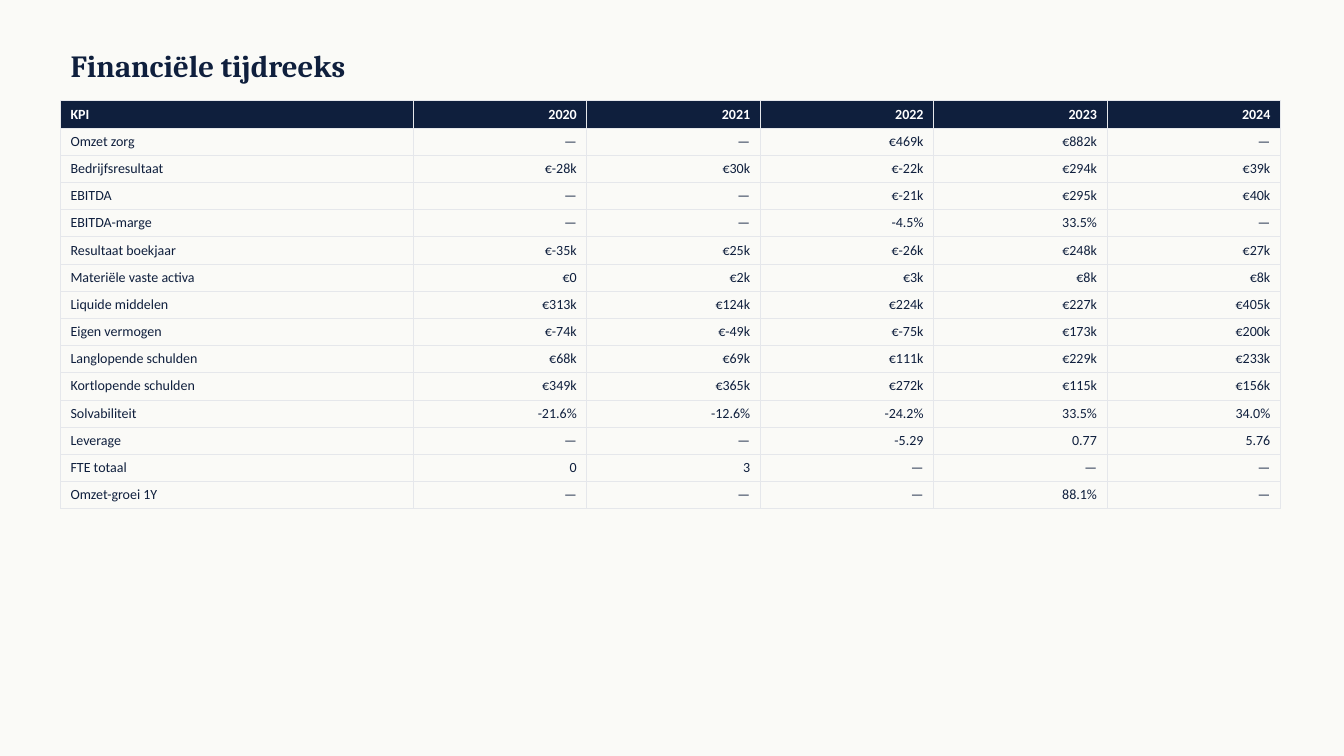
import dataclasses
import typing

import lxml.etree
import pptx
import pptx.dml.color
import pptx.enum.text
import pptx.oxml.ns
import pptx.presentation
import pptx.slide
import pptx.table
import pptx.text.text
import pptx.util

GRID_STEP = 0.1
NAVY = "0F1F3D"
WHITE = "FFFFFF"
IVORY = "FAFAF7"
RULE_GREY = "E5E7EB"
RULE_WIDTH = 0.5
TITLE_FONT = "Cambria"
TABLE_FONT = "Calibri"
LEFT = pptx.enum.text.PP_ALIGN.LEFT
RIGHT = pptx.enum.text.PP_ALIGN.RIGHT


@dataclasses.dataclass(frozen=True)
class Area:
    column: float
    row: float
    columns: float
    rows: float


@dataclasses.dataclass(frozen=True)
class TextStyle:
    font: str
    size: float
    color: str
    bold: bool


@dataclasses.dataclass(frozen=True)
class Indicator:
    name: str
    values: tuple[str, ...]


TITLE_AREA = Area(6, 4, 120, 5)
TABLE_AREA = Area(6, 10, 121, 40.5)
NAME_COLUMNS = 35
TITLE_STYLE = TextStyle(TITLE_FONT, 22, NAVY, True)
HEADER_STYLE = TextStyle(TABLE_FONT, 10, WHITE, True)
BODY_STYLE = TextStyle(TABLE_FONT, 10, NAVY, False)

HEADER = Indicator("KPI", ("2020", "2021", "2022", "2023", "2024"))
INDICATORS = (
    Indicator("Omzet zorg", ("—", "—", "€469k", "€882k", "—")),
    Indicator("Bedrijfsresultaat", ("€-28k", "€30k", "€-22k", "€294k", "€39k")),
    Indicator("EBITDA", ("—", "—", "€-21k", "€295k", "€40k")),
    Indicator("EBITDA-marge", ("—", "—", "-4.5%", "33.5%", "—")),
    Indicator("Resultaat boekjaar", ("€-35k", "€25k", "€-26k", "€248k", "€27k")),
    Indicator("Materiële vaste activa", ("€0", "€2k", "€3k", "€8k", "€8k")),
    Indicator("Liquide middelen", ("€313k", "€124k", "€224k", "€227k", "€405k")),
    Indicator("Eigen vermogen", ("€-74k", "€-49k", "€-75k", "€173k", "€200k")),
    Indicator("Langlopende schulden", ("€68k", "€69k", "€111k", "€229k", "€233k")),
    Indicator("Kortlopende schulden", ("€349k", "€365k", "€272k", "€115k", "€156k")),
    Indicator("Solvabiliteit", ("-21.6%", "-12.6%", "-24.2%", "33.5%", "34.0%")),
    Indicator("Leverage", ("—", "—", "-5.29", "0.77", "5.76")),
    Indicator("FTE totaal", ("0", "3", "—", "—", "—")),
    Indicator("Omzet-groei 1Y", ("—", "—", "—", "88.1%", "—")),
)


def grid(steps: float) -> pptx.util.Length:
    return pptx.util.Inches(steps * GRID_STEP)


def color(value: str) -> pptx.dml.color.RGBColor:
    return pptx.dml.color.RGBColor.from_string(value)


def format_text(
    frame: pptx.text.text.TextFrame,
    style: TextStyle,
    alignment: pptx.enum.text.PP_ALIGN,
) -> None:
    for para in frame.paragraphs:
        para.alignment = alignment
        for span in para.runs:
            span.font.name = style.font
            span.font.size = pptx.util.Pt(style.size)
            span.font.bold = style.bold
            span.font.color.rgb = color(style.color)


def draw_title(page: pptx.slide.Slide, text: str, area: Area) -> None:
    title = page.shapes.title
    title.left, title.top = grid(area.column), grid(area.row)
    title.width, title.height = grid(area.columns), grid(area.rows)
    frame = title.text_frame
    frame.text = text
    frame.word_wrap = True
    frame.auto_size = pptx.enum.text.MSO_AUTO_SIZE.NONE
    frame.vertical_anchor = pptx.enum.text.MSO_ANCHOR.MIDDLE
    format_text(frame, TITLE_STYLE, LEFT)


def draw_borders(cell: pptx.table._Cell) -> None:
    properties = cell._tc.get_or_add_tcPr()
    qualified = pptx.oxml.ns.qn
    for side in ("a:lnL", "a:lnR", "a:lnT", "a:lnB"):
        line = lxml.etree.SubElement(
            properties, qualified(side), w=str(pptx.util.Pt(RULE_WIDTH))
        )
        fill = lxml.etree.SubElement(line, qualified("a:solidFill"))
        lxml.etree.SubElement(fill, qualified("a:srgbClr"), val=RULE_GREY)


def draw_cell(
    cell: pptx.table._Cell,
    text: str,
    style: TextStyle,
    alignment: pptx.enum.text.PP_ALIGN,
    background: typing.Optional[str],
) -> None:
    cell.text_frame.text = text
    cell.margin_top = cell.margin_bottom = pptx.util.Inches(0.05)
    format_text(cell.text_frame, style, alignment)
    draw_borders(cell)
    if background is None:
        cell.fill.background()
    else:
        cell.fill.solid()
        cell.fill.fore_color.rgb = color(background)


def draw_row(
    table: pptx.table.Table,
    index: int,
    indicator: Indicator,
    style: TextStyle,
    background: typing.Optional[str] = None,
) -> None:
    for column, text in enumerate((indicator.name, *indicator.values)):
        alignment = RIGHT if column else LEFT
        draw_cell(table.cell(index, column), text, style, alignment, background)


def draw_table(page: pptx.slide.Slide, area: Area) -> None:
    years = len(HEADER.values)
    table = page.shapes.add_table(
        len(INDICATORS) + 1,
        years + 1,
        grid(area.column),
        grid(area.row),
        grid(area.columns),
        grid(area.rows),
    ).table
    table.horz_banding = False
    for index, column in enumerate(table.columns):
        year_columns = (area.columns - NAME_COLUMNS) / years
        column.width = grid(year_columns if index else NAME_COLUMNS)
    draw_row(table, 0, HEADER, HEADER_STYLE, NAVY)
    for index, indicator in enumerate(INDICATORS, start=1):
        draw_row(table, index, indicator, BODY_STYLE)


def build_deck() -> pptx.presentation.Presentation:
    deck = pptx.Presentation()
    deck.slide_width = pptx.util.Inches(13.33)
    deck.slide_height = pptx.util.Inches(7.5)
    page = deck.slides.add_slide(deck.slide_layouts.get_by_name("Title Only"))
    page.background.fill.solid()
    page.background.fill.fore_color.rgb = color(IVORY)
    draw_title(page, "Financiële tijdreeks", TITLE_AREA)
    draw_table(page, TABLE_AREA)
    return deck


def main() -> None:
    deck = build_deck()
    deck.save("out.pptx")


if __name__ == "__main__":
    main()
